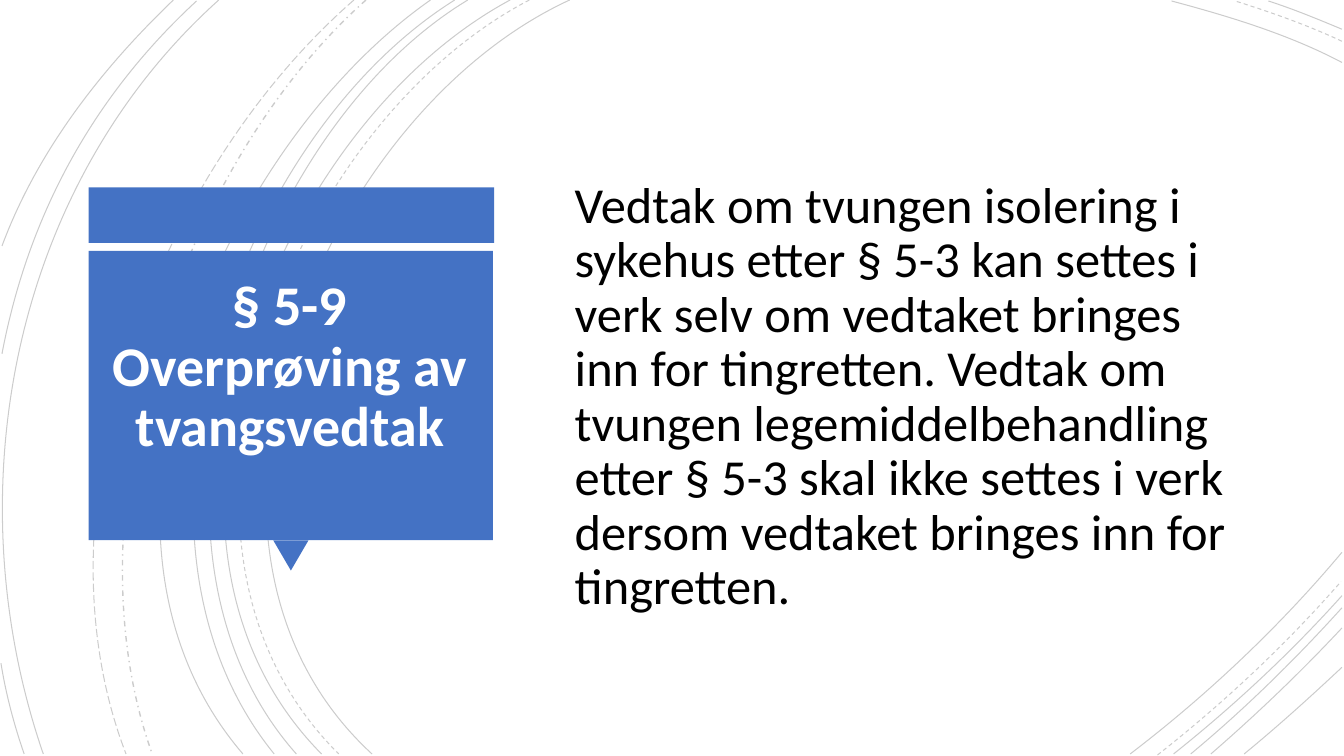
from lxml import etree
from pptx import Presentation
from pptx.dml.color import RGBColor
from pptx.enum import dml, shapes, text
from pptx.oxml.ns import qn
from pptx.util import Inches, Pt

BLACK = RGBColor(0x00, 0x00, 0x00)
WHITE = RGBColor(0xFF, 0xFF, 0xFF)
BLUE = RGBColor(0x44, 0x72, 0xC4)

SOLID = dml.MSO_LINE.SOLID
DASH = dml.MSO_LINE.DASH
LONG_DASH = dml.MSO_LINE.LONG_DASH
DASH_DOT = dml.MSO_LINE.DASH_DOT

ARCS = [
    (SOLID, (5.65, 0), (3.15, 1.15), (1.43, 5.4), (3.69, 7.48)),
    (SOLID, (13.31, 0.62), (12.78, 0.34), (12.18, 0.16), (11.62, 0.01)),
    (SOLID, (11.21, 7.48), (11.97, 6.9), (12.69, 6.22), (13.31, 5.48)),
    (DASH, (5.25, 0), (2.85, 1.25), (1.23, 5.37), (3.36, 7.48)),
    (DASH, (13.31, 0.41), (12.97, 0.25), (12.6, 0.12), (12.25, 0.01)),
    (DASH, (11.48, 7.49), (12.13, 6.98), (12.75, 6.4), (13.3, 5.77)),
    (SOLID, (5.06, 0), (2.7, 1.27), (1.1, 5.37), (3.19, 7.48)),
    (SOLID, (13.31, 0.29), (13.07, 0.19), (12.83, 0.09), (12.58, 0.01)),
    (SOLID, (11.64, 7.48), (12.23, 7.01), (12.8, 6.48), (13.31, 5.91)),
    (SOLID, (4.64, 0), (2.44, 1.33), (1.1, 5.41), (2.94, 7.48)),
    (SOLID, (11.81, 7.48), (12.34, 7.04), (12.84, 6.55), (13.31, 6.03)),
    (SOLID, (4.51, 0), (2.31, 1.38), (0.97, 5.33), (2.72, 7.48)),
    (SOLID, (12.01, 7.48), (12.46, 7.09), (12.9, 6.67), (13.31, 6.23)),
    (SOLID, (4.27, 0), (2.17, 1.47), (0.53, 5.29), (2.41, 7.48)),
    (SOLID, (12.34, 7.48), (12.67, 7.21), (12.99, 6.92), (13.31, 6.62)),
    (DASH_DOT, (3.63, 0), (1.76, 1.66), (0.65, 5.09), (1.51, 7.48)),
    (LONG_DASH, (3.51, 0), (1.57, 1.69), (0.29, 4.99), (1.25, 7.48)),
    (SOLID, (2.17, 0), (0.11, 1.85), (-0.46, 4.9), (0.43, 7.48)),
    (SOLID, (1.95, 0.01), (0.92, 0.96), (0.28, 2.14), (0.02, 3.51)),
    (SOLID, (0.01, 6.58), (0.06, 6.89), (0.14, 7.19), (0.24, 7.48)),
    (SOLID, (1.72, 0), (1, 0.69), (0.37, 1.5), (0.02, 2.44)),
]

TITLE = "§ 5-9 Overprøving av tvangsvedtak"
BODY = (
    "Vedtak om tvungen isolering i sykehus etter § 5-3 kan settes i verk "
    "selv om vedtaket bringes inn for tingretten. Vedtak om tvungen "
    "legemiddelbehandling etter § 5-3 skal ikke settes i verk dersom "
    "vedtaket bringes inn for tingretten."
)


def add_arc(group, dash, *points):
    start, *controls = [(Inches(x), Inches(y)) for x, y in points]
    builder = group.shapes.build_freeform(*start)
    builder.add_line_segments(controls, close=False)
    arc = builder.convert_to_shape()
    segments = list(arc.element.iter(qn("a:lnTo")))
    curve = etree.SubElement(segments[0].getparent(), qn("a:cubicBezTo"))
    for segment in segments:
        curve.append(segment[0])
        segment.getparent().remove(segment)
    arc.shadow.inherit = False
    arc.fill.background()
    arc.line.color.rgb = BLACK
    arc.line.width = Pt(1 if dash == DASH_DOT else 0.75)
    arc.line.dash_style = dash
    colour = next(arc.element.iter(qn("a:srgbClr")))
    etree.SubElement(colour, qn("a:alpha"), val="20000")


def add_block(group, kind, left, top, width, height, rotation=0):
    block = group.shapes.add_shape(
        kind, Inches(left), Inches(top), Inches(width), Inches(height)
    )
    block.rotation = rotation
    block.shadow.inherit = False
    block.fill.solid()
    block.fill.fore_color.rgb = BLUE
    block.line.fill.background()


def fill_placeholder(box, place, words, size, colour, align):
    box.left, box.top, box.width, box.height = map(Inches, place)
    frame = box.text_frame
    frame.text = words
    frame.word_wrap = True
    frame.auto_size = text.MSO_AUTO_SIZE.NONE
    frame.vertical_anchor = text.MSO_ANCHOR.MIDDLE
    para = frame.paragraphs[0]
    props = para._p.get_or_add_pPr()
    props.set("marL", "0")
    props.set("indent", "0")
    etree.SubElement(props, qn("a:buNone"))
    para.alignment = align
    para.line_spacing = 0.9
    para.space_before = Pt(0)
    para.font.name = "Calibri"
    para.font.size = Pt(size)
    para.font.color.rgb = colour
    return frame


def main():
    deck = Presentation()
    deck.slide_width, deck.slide_height = Inches(13.33), Inches(7.5)
    page = deck.slides.add_slide(deck.slide_layouts[1])
    title, body = page.placeholders

    arcs = page.shapes.add_group_shape()
    for arc in ARCS:
        add_arc(arcs, *arc)

    callout = page.shapes.add_group_shape()
    kinds = shapes.MSO_SHAPE
    add_block(callout, kinds.RECTANGLE, 0.88, 1.86, 4.02, 0.55)
    add_block(callout, kinds.ISOSCELES_TRIANGLE, 2.71, 5.36, 0.35, 0.3, 180)
    add_block(callout, kinds.RECTANGLE, 0.88, 2.49, 4.01, 2.87)

    for box in (title, body):
        page.shapes._spTree.append(box.element)
    heading = fill_placeholder(
        title, (0.99, 2.64, 3.77, 2.62), TITLE, 40, WHITE, text.PP_ALIGN.CENTER
    )
    heading.paragraphs[0].font.bold = True
    heading.margin_bottom = Inches(0.65)
    provision = fill_placeholder(
        body, (5.6, 0.88, 6.87, 5.74), BODY, 36, BLACK, text.PP_ALIGN.LEFT
    )
    provision.paragraphs[0].space_after = Pt(6)
    provision.margin_top = Inches(0.44)

    deck.save("out.pptx")


if __name__ == "__main__":
    main()
